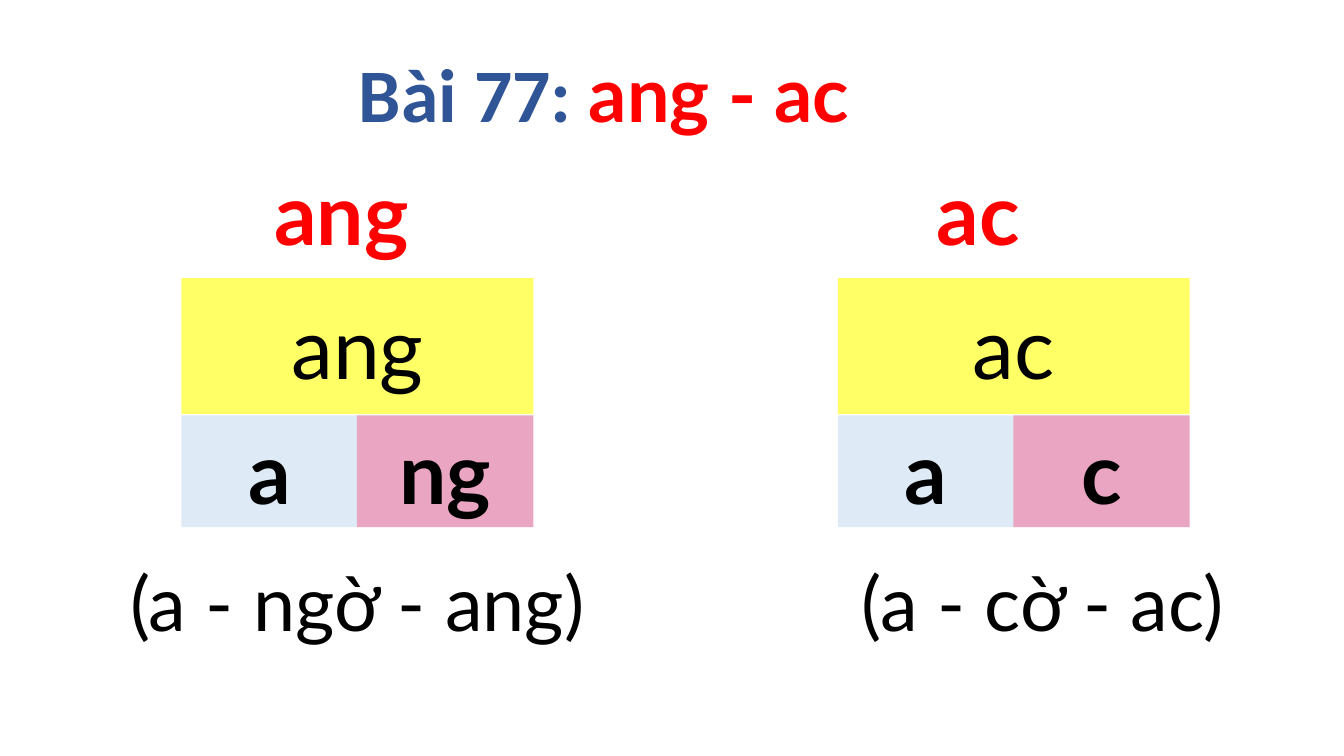
from dataclasses import dataclass
from typing import Optional

import pptx
import pptx.dml.color
import pptx.enum.shapes
import pptx.enum.text
import pptx.util

Inches = pptx.util.Inches
RGBColor = pptx.dml.color.RGBColor
ALIGN = pptx.enum.text.PP_ALIGN
ANCHOR = pptx.enum.text.MSO_ANCHOR

RED = RGBColor(0xFF, 0x00, 0x00)
BLACK = RGBColor(0x00, 0x00, 0x00)
BLUE = RGBColor(0x2F, 0x55, 0x97)
YELLOW = RGBColor(0xFF, 0xFF, 0x66)
PALE_BLUE = RGBColor(0xDE, 0xEB, 0xF7)
PINK = RGBColor(0xE9, 0xA5, 0xC2)

BLOCK_WIDTH = 3.49
HALF_WIDTH = 1.75
RHYME_TOP, RHYME_HEIGHT = 2.76, 1.35
LETTER_TOP, LETTER_HEIGHT = 4.12, 1.11


@dataclass
class Rhyme:
    sound: str
    first: str
    last: str
    spelling: str
    block_left: float
    heading_left: float
    heading_width: float
    spelling_left: float
    spelling_width: float


RHYMES = [
    Rhyme("ang", "a", "ng", "(a - ngờ - ang)", 1.8, 2.62, 2.04, 0.46, 6.17),
    Rhyme("ac", "a", "c", "(a - cờ - ac)", 8.31, 9.19, 1.85, 7.45, 5.78),
]


def add_run(p, text: str, *, size: float = 60, color: RGBColor = BLACK,
            bold: bool = False, font: str = "Lato") -> None:
    r = p.add_run()
    r.text = text
    r.font.name = font
    r.font.size = pptx.util.Pt(size)
    r.font.bold = bold
    r.font.color.rgb = color


def add_box(slide, left: float, top: float, width: float, height: float,
            fill: Optional[RGBColor] = None, align=ALIGN.CENTER):
    """Add a filled rectangle, or a text box if no fill; return its paragraph."""
    box = [Inches(v) for v in (left, top, width, height)]
    if fill is None:
        sp = slide.shapes.add_textbox(*box)
    else:
        sp = slide.shapes.add_shape(
            pptx.enum.shapes.MSO_SHAPE.RECTANGLE, *box)
        sp.shadow.inherit = False
        sp.fill.solid()
        sp.fill.fore_color.rgb = fill
        sp.line.fill.background()
    tf = sp.text_frame
    tf.word_wrap = True
    tf.vertical_anchor = ANCHOR.TOP if fill is None else ANCHOR.MIDDLE
    p = tf.paragraphs[0]
    p.alignment = align
    return p


def add_rhyme(slide, rhyme: Rhyme) -> None:
    p = add_box(slide, rhyme.heading_left, 1.55, rhyme.heading_width, 1.11,
                align=ALIGN.LEFT)
    add_run(p, rhyme.sound, color=RED, bold=True)

    left = rhyme.block_left
    p = add_box(slide, left, RHYME_TOP, BLOCK_WIDTH, RHYME_HEIGHT, YELLOW)
    add_run(p, rhyme.sound)
    letters = [
        (rhyme.first, left, PALE_BLUE),
        (rhyme.last, left + BLOCK_WIDTH - HALF_WIDTH, PINK),
    ]
    for letter, x, fill in letters:
        p = add_box(slide, x, LETTER_TOP, HALF_WIDTH, LETTER_HEIGHT, fill)
        add_run(p, letter, bold=True)

    p = add_box(slide, rhyme.spelling_left, 5.47, rhyme.spelling_width, 1.01)
    add_run(p, rhyme.spelling, size=54)


def main() -> None:
    prs = pptx.Presentation()
    prs.slide_width = Inches(13.33)
    prs.slide_height = Inches(7.5)
    slide = prs.slides.add_slide(prs.slide_layouts[6])

    for rhyme in RHYMES:
        add_rhyme(slide, rhyme)

    p = add_box(slide, 3.46, 0.42, 6.59, 1.01, align=ALIGN.LEFT)
    add_run(p, "Bài 77: ", size=54, color=BLUE, bold=True, font="Calibri")
    add_run(p, "ang - ac", size=54, color=RED, bold=True)

    prs.save("out.pptx")


if __name__ == "__main__":
    main()
